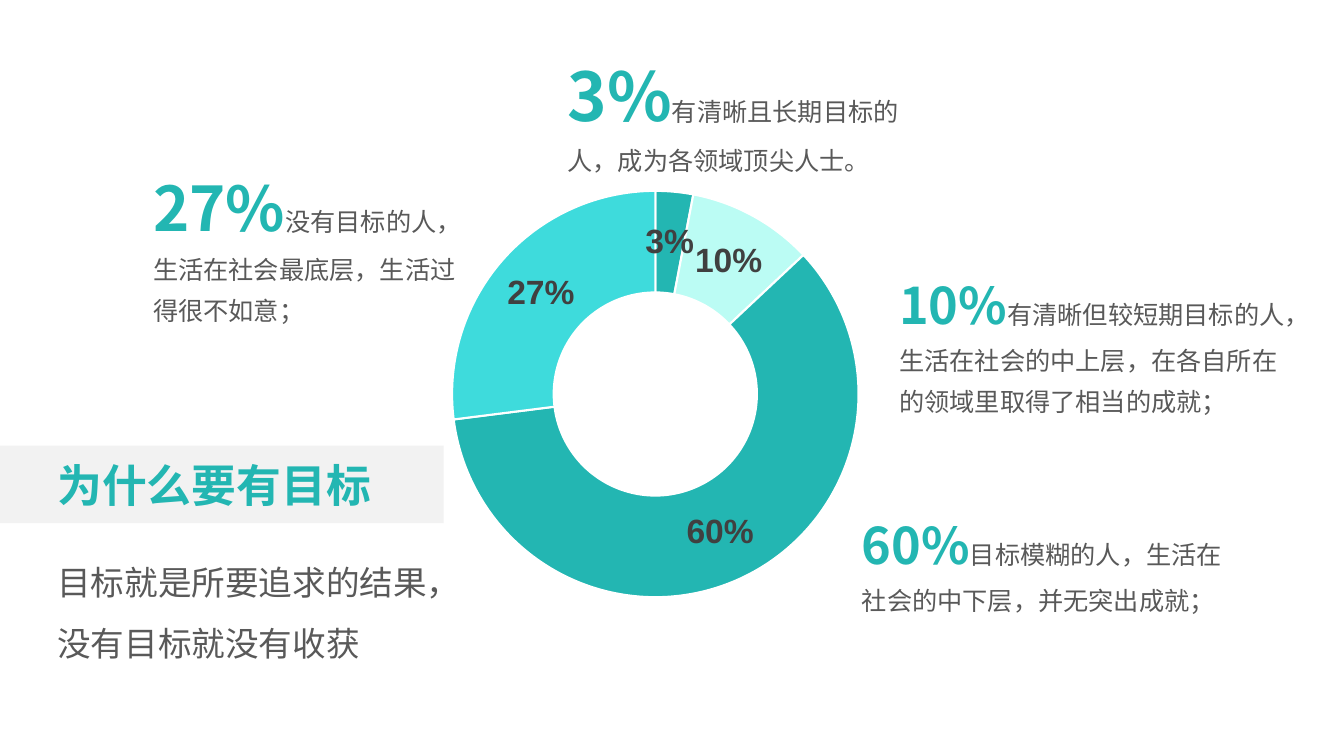
from dataclasses import dataclass

from lxml import etree
from pptx import Presentation
from pptx.chart.data import CategoryChartData
from pptx.dml.color import RGBColor
from pptx.enum.chart import XL_CHART_TYPE
from pptx.enum.shapes import MSO_SHAPE
from pptx.enum.text import MSO_AUTO_SIZE
from pptx.oxml.ns import qn
from pptx.util import Inches, Pt

DOUGHNUT = XL_CHART_TYPE.DOUGHNUT
RECTANGLE = MSO_SHAPE.RECTANGLE
GROW = MSO_AUTO_SIZE.SHAPE_TO_FIT_TEXT


@dataclass(frozen=True)
class Theme:
    font: str = "Noto Sans CJK SC"
    chart_font: str = "Arial"
    teal: str = "23B6B2"
    mint: str = "BBFCF4"
    aqua: str = "3EDBDC"
    band: str = "F2F2F2"
    white: str = "FFFFFF"
    body: str = "595959"
    label: str = "404040"
    title_size: int = 32
    lead_size: int = 24
    body_size: int = 18
    label_size: int = 24


class SlideBuilder:
    def __init__(self, prs, theme):
        self.theme = theme
        self.slide = prs.slides.add_slide(prs.slide_layouts[6])

    def band(self, box):
        sp = self.slide.shapes.add_shape(RECTANGLE, *map(Inches, box))
        sp.shadow.inherit = False
        sp.fill.solid()
        sp.fill.fore_color.rgb = RGBColor.from_string(self.theme.band)
        sp.line.fill.background()

    def text(self, box, runs, spacing=None):
        tf = self.slide.shapes.add_textbox(*map(Inches, box)).text_frame
        tf.word_wrap = True
        tf.auto_size = GROW
        p = tf.paragraphs[0]
        if spacing:
            p.line_spacing = spacing
        for text, size, color, bold in runs:
            r = p.add_run()
            r.text = text
            r.font.size = Pt(size)
            r.font.bold = bold
            r.font.color.rgb = RGBColor.from_string(color)
            r.font.name = self.theme.font
            ea = etree.SubElement(r._r.get_or_add_rPr(), qn("a:ea"))
            ea.set("typeface", self.theme.font)

    def callout(self, box, share, size, text):
        t = self.theme
        runs = [(f"{share}%", size, t.teal, True), (text, t.body_size, t.body, False)]
        self.text(box, runs, 1.35)

    def doughnut(self, box, shares, colors, hole):
        t = self.theme
        data = CategoryChartData()
        data.categories = [str(i + 1) for i in range(len(shares))]
        data.add_series("Series 1", shares)
        chart = self.slide.shapes.add_chart(DOUGHNUT, *map(Inches, box), data).chart
        chart.has_legend = False
        chart.has_title = False
        self.chart_font(chart.font)

        plot = chart.plots[0]
        plot.vary_by_categories = True
        plot.has_data_labels = True
        labels = plot.data_labels
        labels.show_percentage = True
        labels.show_value = False
        labels.number_format = "0%"
        labels.number_format_is_linked = False
        self.chart_font(labels.font)
        labels.font.bold = True

        for i, color in enumerate(colors):
            fmt = plot.series[0].points[i].format
            fmt.fill.solid()
            fmt.fill.fore_color.rgb = RGBColor.from_string(color)
            fmt.line.color.rgb = RGBColor.from_string(t.white)
            fmt.line.width = Pt(1.5)

        area = chart._chartSpace.find(".//" + qn("c:plotArea"))
        area.find(".//" + qn("c:holeSize")).set("val", str(hole))
        for old in area.findall(qn("c:layout")):
            area.remove(old)
        layout = etree.Element(qn("c:layout"))
        manual = etree.SubElement(layout, qn("c:manualLayout"))
        for tag, val in (("layoutTarget", "inner"), ("xMode", "edge"), ("yMode", "edge"),
                         ("x", "0.02"), ("y", "0.02"), ("w", "0.96"), ("h", "0.96")):
            etree.SubElement(manual, qn(f"c:{tag}")).set("val", val)
        area.insert(0, layout)

    def chart_font(self, font):
        font.name = self.theme.chart_font
        font.size = Pt(self.theme.label_size)
        font.color.rgb = RGBColor.from_string(self.theme.label)


CALLOUTS = [
    ((1.42, 1.38, 3.32, 1.92), 27, 44, "没有目标的人，生活在社会最底层，生活过得很不如意；"),
    ((8.45, 4.84, 3.78, 1.33), 60, 36, "目标模糊的人，生活在社会的中下层，并无突出成就；"),
    ((8.82, 2.46, 4.06, 1.73), 10, 36,
     "有清晰但较短期目标的人，生活在社会的中上层，在各自所在的领域里取得了相当的成就；"),
    ((5.53, 0.21, 3.6, 1.6), 3, 48, "有清晰且长期目标的人，成为各领域顶尖人士。"),
]


def main():
    prs = Presentation()
    prs.slide_width = Inches(13.33)
    prs.slide_height = Inches(7.5)
    t = Theme()
    s = SlideBuilder(prs, t)

    s.band((-0.01, 4.42, 4.41, 0.77))
    s.doughnut((4.4, 1.81, 4.2, 4.2), (3, 10, 60, 27), (t.teal, t.mint, t.teal, t.aqua), 60)
    for callout in CALLOUTS:
        s.callout(*callout)
    s.text((0.47, 4.49, 3.4, 0.64), [("为什么要有目标", t.title_size, t.teal, True)])
    s.text((0.47, 5.33, 4.26, 1.31),
           [("目标就是所要追求的结果，没有目标就没有收获", t.lead_size, t.body, False)], 1.5)

    prs.save("out.pptx")


if __name__ == "__main__":
    main()
